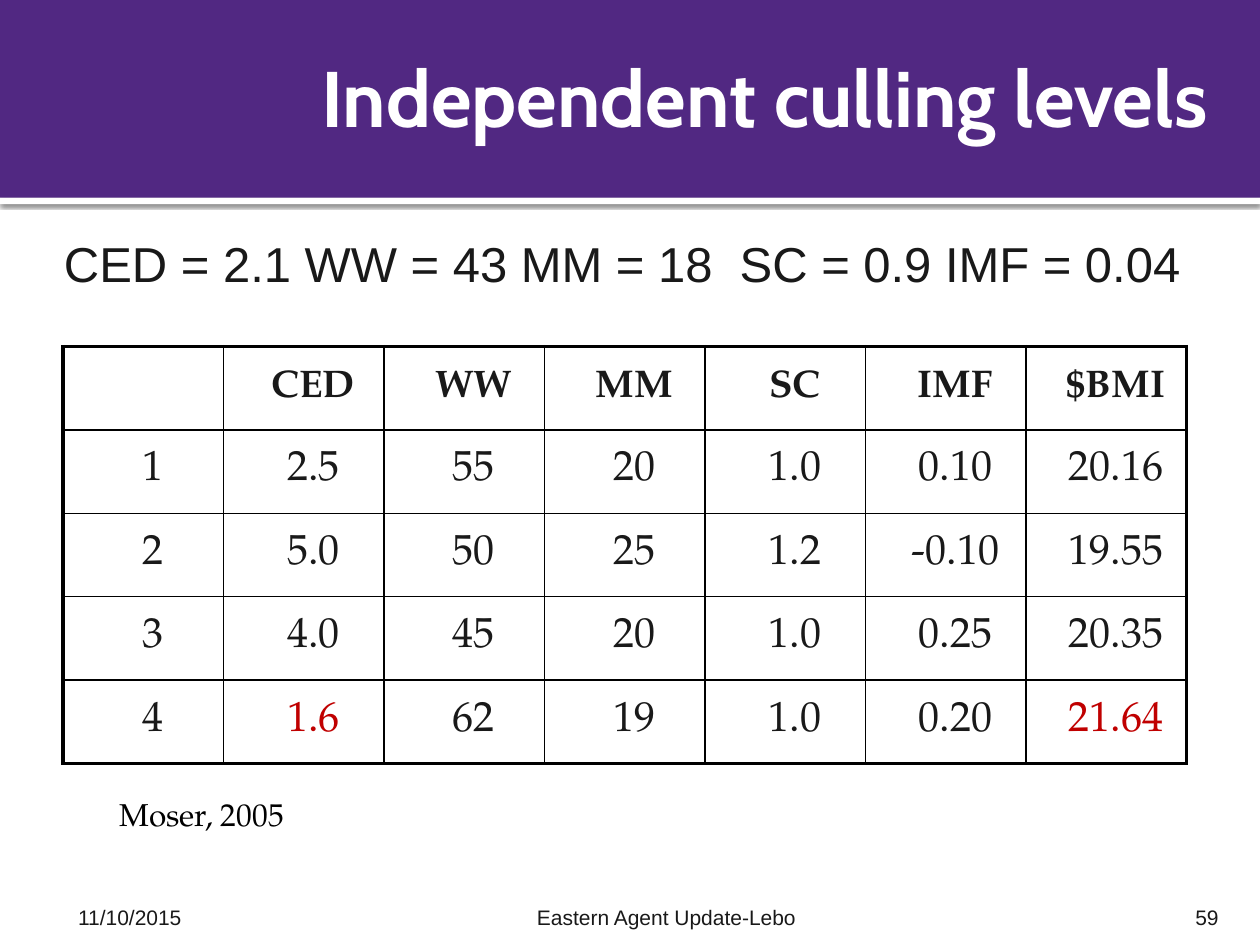
from lxml import etree
from pptx import Presentation
from pptx.dml.color import RGBColor
from pptx.enum.shapes import MSO_SHAPE
from pptx.enum.text import MSO_ANCHOR, PP_ALIGN
from pptx.oxml import parse_xml
from pptx.oxml.ns import nsdecls, qn
from pptx.util import Inches, Pt

LEFT, CENTER, RIGHT = PP_ALIGN.LEFT, PP_ALIGN.CENTER, PP_ALIGN.RIGHT
TOP, MIDDLE, BOTTOM = MSO_ANCHOR.TOP, MSO_ANCHOR.MIDDLE, MSO_ANCHOR.BOTTOM
RECTANGLE = MSO_SHAPE.RECTANGLE

# Content
TITLE = "Independent culling levels"
THRESHOLDS = "CED = 2.1 WW = 43 MM = 18  SC = 0.9 IMF = 0.04"
HEADINGS = ["", "CED", "WW", "MM", "SC", "IMF", "$BMI"]
BULLS = [
    ["1", "2.5", "55", "20", "1.0", "0.10", "20.16"],
    ["2", "5.0", "50", "25", "1.2", "-0.10", "19.55"],
    ["3", "4.0", "45", "20", "1.0", "0.25", "20.35"],
    ["4", "1.6", "62", "19", "1.0", "0.20", "21.64"],
]
HIGHLIGHTS = {"1.6", "21.64"}
CITATION = "Moser, 2005"
DATE, EVENT, PAGE = "11/10/2015", "Eastern Agent Update-Lebo", "59"

THEME = {
    "band": "512882", "white": "FFFFFF", "ink": "191919", "black": "000000",
    "highlight": "C00000",
    "sans": "Arial", "serif": "TeX Gyre Pagella", "display": "Cabin",
    "title": 45, "thresholds": 28, "heading": 22, "value": 24,
    "citation": 18, "footer": 12, "outer": 2.25, "inner": 1,
}

# Layout, in inches
WIDTH, HEIGHT = 10, 7.5
BAND_HEIGHT = 1.57
TABLE_AREA = (0.5, 2.75, 8.92, 3.31)
FOOTER_TOP, FOOTER_HEIGHT = 7.08, 0.3

presentation = Presentation()
presentation.slide_width, presentation.slide_height = Inches(WIDTH), Inches(HEIGHT)
slide = presentation.slides.add_slide(presentation.slide_layouts[6])


def write(frame, text, *, size, font="sans", color="ink", bold=False, align=LEFT,
          indent=(0, 0)):
    paragraph = frame.paragraphs[0]
    paragraph.alignment = align
    margin, first_line = indent
    properties = paragraph._p.get_or_add_pPr()
    properties.set("marL", str(Inches(margin)))
    properties.set("indent", str(Inches(first_line)))
    run = paragraph.add_run()
    run.text = text
    run.font.name = THEME[font]
    run.font.size = Pt(THEME[size])
    run.font.bold = bold
    run.font.color.rgb = RGBColor.from_string(THEME[color])


def add_text(area, text, *, anchor=TOP, insets=(0.1, 0.05, 0.1, 0.05), wrap=True,
             **style):
    frame = slide.shapes.add_textbox(*map(Inches, area)).text_frame
    frame.word_wrap = wrap
    frame.vertical_anchor = anchor
    (frame.margin_left, frame.margin_top,
     frame.margin_right, frame.margin_bottom) = map(Inches, insets)
    write(frame, text, **style)


def add_bar(top, height, color):
    bar = slide.shapes.add_shape(RECTANGLE, 0, Inches(top), Inches(WIDTH), Inches(height))
    bar.shadow.inherit = False
    bar.fill.solid()
    bar.fill.fore_color.rgb = RGBColor.from_string(THEME[color])
    bar.line.fill.background()
    return bar


def set_borders(cell, weights):
    for position, (side, weight) in enumerate(weights.items()):
        cell._tc.get_or_add_tcPr().insert(position, parse_xml(
            f'<a:ln{side} {nsdecls("a")} w="{Pt(weight)}"><a:solidFill>'
            f'<a:srgbClr val="{THEME["black"]}"/></a:solidFill></a:ln{side}>'))


# Header band over a shadowed white rule
rule = add_bar(BAND_HEIGHT, 0.05, "white")
effects = rule._element.spPr.find(qn("a:effectLst"))
shadow = etree.SubElement(effects, qn("a:outerShdw"), blurRad=str(Pt(2.5)),
                          dist=str(Pt(0.8)), dir="5400000", rotWithShape="0")
shade = etree.SubElement(shadow, qn("a:srgbClr"), val=THEME["black"])
etree.SubElement(shade, qn("a:alpha"), val="60000")
add_bar(0, BAND_HEIGHT, "band")
add_text((2.25, 0.08, 7.58, 1.37), TITLE, anchor=MIDDLE,
         insets=(0.1, 0.05, 0.05, 0.05), size="title", font="display",
         color="white", bold=True, align=CENTER)

# Culling thresholds
add_text((0.26, 1.75, 9.43, 0.8), THRESHOLDS, insets=(0.1, 0.1, 0.1, 0.05),
         size="thresholds", indent=(0.6, -0.45))

# Table of bulls
rows = [HEADINGS] + BULLS
last_row, last_column = len(rows) - 1, len(HEADINGS) - 1
table = slide.shapes.add_table(len(rows), len(HEADINGS), *map(Inches, TABLE_AREA)).table
table.first_row = table.horz_banding = False
for column in table.columns:
    column.width = Inches(TABLE_AREA[2] / len(HEADINGS))
for row in table.rows:
    row.height = Inches(TABLE_AREA[3] / len(rows))
for r, values in enumerate(rows):
    for c, value in enumerate(values):
        cell = table.cell(r, c)
        cell.fill.background()
        cell.vertical_anchor = MIDDLE
        on_edge = {"L": c == 0, "R": c == last_column, "T": r == 0, "B": r == last_row}
        set_borders(cell, {side: THEME["outer" if edge else "inner"]
                           for side, edge in on_edge.items()})
        if value:
            write(cell.text_frame, value, size="value" if r else "heading",
                  font="serif", color="highlight" if value in HIGHLIGHTS else "ink",
                  bold=r == 0, align=CENTER, indent=(0.15, 0))

# Citation
add_text((0.85, 6.26, 1.52, 0.4), CITATION, wrap=False, size="citation",
         font="serif", color="black")

# Footer: left, width, text, alignment, left and right insets
for left, width, text, align, inset_left, inset_right in [
    (0.5, 1.17, DATE, LEFT, 0.12, 0.05),
    (1.67, 7.24, EVENT, CENTER, 0.05, 0.05),
    (8.97, 0.8, PAGE, RIGHT, 0.1, 0.1),
]:
    add_text((left, FOOTER_TOP, width, FOOTER_HEIGHT), text, anchor=BOTTOM,
             insets=(inset_left, 0.05, inset_right, 0), size="footer", align=align)

presentation.save("out.pptx")
